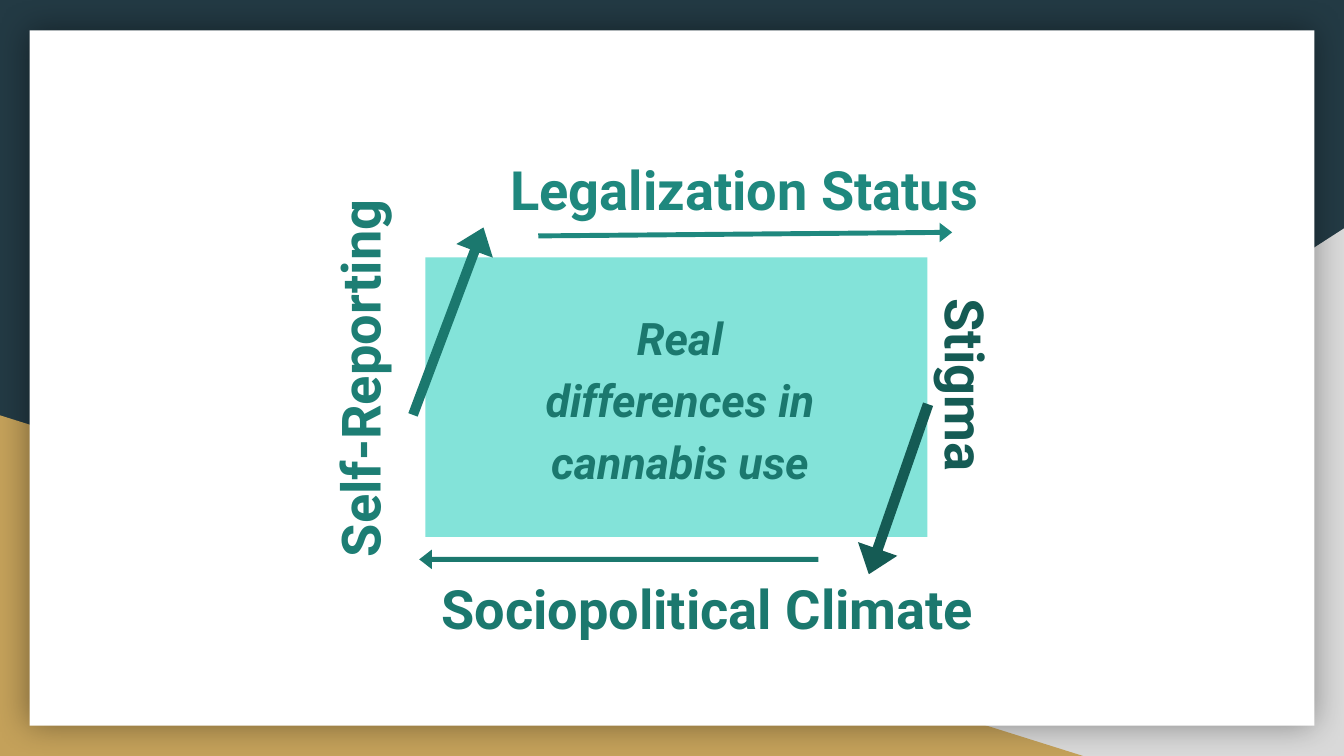
from dataclasses import dataclass

from lxml.etree import SubElement
from pptx import Presentation
from pptx.dml.color import RGBColor
from pptx.enum.shapes import MSO_SHAPE
from pptx.enum.text import MSO_ANCHOR, PP_ALIGN
from pptx.oxml.ns import qn
from pptx.shapes.autoshape import Shape
from pptx.slide import Slide
from pptx.util import Emu, Pt

EMU_PER_PX = 4572
SLIDE_WIDTH = 2000
SLIDE_HEIGHT = 1125
FONT = "Roboto"
INSET = 20

NAVY = RGBColor(0x23, 0x3A, 0x44)
GREY = RGBColor(0xD9, 0xD9, 0xD9)
GOLD = RGBColor(0xC4, 0xA1, 0x5A)
WHITE = RGBColor(0xFF, 0xFF, 0xFF)
MINT = RGBColor(0x83, 0xE3, 0xD9)
TEAL = RGBColor(0x1B, 0x78, 0x6E)
DARK_TEAL = RGBColor(0x15, 0x5B, 0x54)
MID_TEAL = RGBColor(0x1D, 0x7E, 0x74)
LIGHT_TEAL = RGBColor(0x1F, 0x88, 0x7E)


@dataclass(frozen=True)
class Box:
    left: int
    top: int
    width: int
    height: int


@dataclass(frozen=True)
class Block:
    kind: MSO_SHAPE
    box: Box
    color: RGBColor
    rotation: float = 0
    flipped: bool = False


@dataclass(frozen=True)
class Label:
    text: str
    box: Box
    color: RGBColor
    rotation: float = 0
    size: int = 29
    italic: bool = False
    spacing: float = 1.0
    anchor: MSO_ANCHOR = MSO_ANCHOR.TOP


@dataclass(frozen=True)
class Factor:
    label: Label
    arrow: Block


GREY_CORNER = Block(MSO_SHAPE.RIGHT_TRIANGLE, Box(784, 340, 1216, 785), GREY, flipped=True)
GOLD_CORNER = Block(MSO_SHAPE.RIGHT_TRIANGLE, Box(0, 618, 1612, 507), GOLD)
CARD = Block(MSO_SHAPE.RECTANGLE, Box(44, 45, 1912, 1035), WHITE)
CENTER = Block(MSO_SHAPE.RECTANGLE, Box(633, 383, 747, 416), MINT)
CENTER_LABEL = Label(
    "Real differences in cannabis use", Box(782, 443, 460, 292), TEAL,
    size=24, italic=True, spacing=1.15, anchor=MSO_ANCHOR.MIDDLE,
)
FACTORS = [
    Factor(
        Label("Stigma", Box(1079, 513, 764, 120), DARK_TEAL, 90, spacing=1.15),
        Block(MSO_SHAPE.RIGHT_ARROW, Box(1203, 697, 268, 62), DARK_TEAL, 109.2),
    ),
    Factor(
        Label("Sociopolitical Climate", Box(628, 836, 850, 96), TEAL),
        Block(MSO_SHAPE.RIGHT_ARROW, Box(624, 818, 594, 29), TEAL, flipped=True),
    ),
    Factor(
        Label("Self-Reporting", Box(50, 503, 952, 120), MID_TEAL, 270),
        Block(MSO_SHAPE.RIGHT_ARROW, Box(518, 449, 298, 58), TEAL, 110.6, True),
    ),
    Factor(
        Label("Legalization Status", Box(724, 213, 768, 68), LIGHT_TEAL),
        Block(MSO_SHAPE.RIGHT_ARROW, Box(801, 334, 616, 29), LIGHT_TEAL, 359.5),
    ),
]


def px(length: int) -> Emu:
    return Emu(length * EMU_PER_PX)


def place(box: Box) -> tuple[Emu, Emu, Emu, Emu]:
    return px(box.left), px(box.top), px(box.width), px(box.height)


def draw_block(slide: Slide, block: Block) -> Shape:
    shape = slide.shapes.add_shape(block.kind, *place(block.box))
    shape.shadow.inherit = False
    shape.fill.solid()
    shape.fill.fore_color.rgb = block.color
    shape.line.fill.background()
    shape.rotation = block.rotation
    if block.flipped:
        shape._element.spPr.find(qn("a:xfrm")).set("flipH", "1")
    if block.kind == MSO_SHAPE.RIGHT_ARROW:
        shape.adjustments[0] = 0.255
        shape.adjustments[1] = 0.643
    return shape


def add_glow_shadow(shape: Shape) -> None:
    effects = shape._element.spPr.find(qn("a:effectLst"))
    shadow = SubElement(
        effects, qn("a:outerShdw"), blurRad=str(Pt(18)), dist="0", dir="0",
        algn="ctr", rotWithShape="0",
    )
    color = SubElement(shadow, qn("a:srgbClr"), val="000000")
    SubElement(color, qn("a:alpha"), val="40000")


def draw_label(slide: Slide, label: Label) -> None:
    shape = slide.shapes.add_textbox(*place(label.box))
    shape.rotation = label.rotation
    frame = shape.text_frame
    frame.word_wrap = True
    frame.vertical_anchor = label.anchor
    frame.margin_left = frame.margin_right = px(INSET)
    frame.margin_top = frame.margin_bottom = px(INSET)
    paragraph = frame.paragraphs[0]
    paragraph.text = label.text
    paragraph.alignment = PP_ALIGN.CENTER
    paragraph.line_spacing = label.spacing
    font = paragraph.font
    font.name = FONT
    font.size = Pt(label.size)
    font.bold = True
    font.italic = label.italic
    font.color.rgb = label.color


def main() -> None:
    presentation = Presentation()
    presentation.slide_width = px(SLIDE_WIDTH)
    presentation.slide_height = px(SLIDE_HEIGHT)
    slide = presentation.slides.add_slide(presentation.slide_layouts[6])
    slide.background.fill.solid()
    slide.background.fill.fore_color.rgb = NAVY

    draw_block(slide, GREY_CORNER)
    draw_block(slide, GOLD_CORNER)
    add_glow_shadow(draw_block(slide, CARD))
    draw_block(slide, CENTER)
    draw_label(slide, CENTER_LABEL)
    for factor in FACTORS:
        draw_label(slide, factor.label)
        draw_block(slide, factor.arrow)

    presentation.save("out.pptx")


if __name__ == "__main__":
    main()
